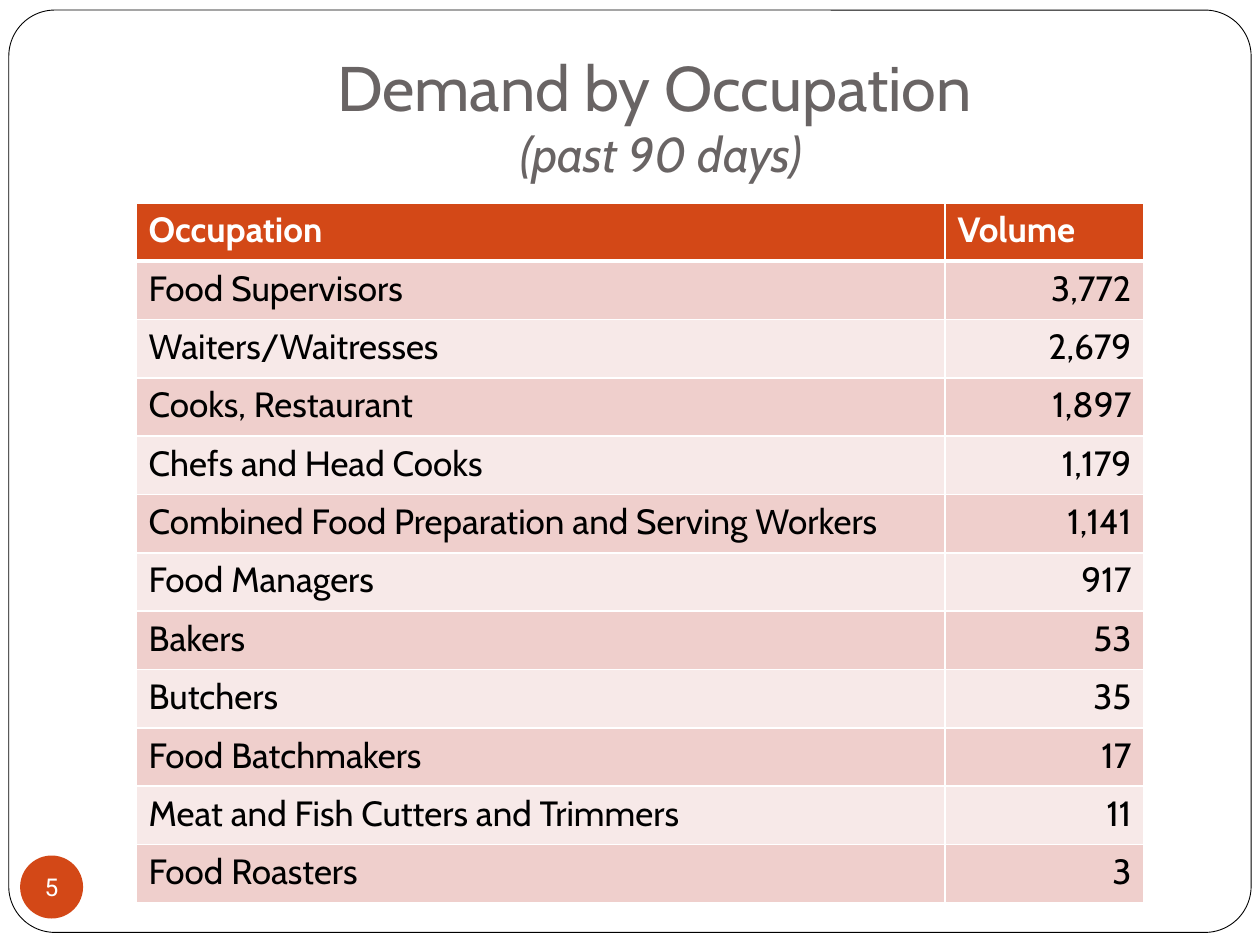
from lxml import etree
from pptx import Presentation
from pptx import util as u
from pptx.dml.color import RGBColor
from pptx.enum import shapes, text
from pptx.oxml.ns import qn

PX = u.Inches(1) // 100
WHITE = RGBColor(0xFF, 0xFF, 0xFF)
BLACK = RGBColor(0, 0, 0)
GREY = RGBColor(0x69, 0x64, 0x64)
ORANGE = RGBColor(0xD3, 0x48, 0x17)
PINK = RGBColor(0xEF, 0xCF, 0xCC)
PALE_PINK = RGBColor(0xF7, 0xE9, 0xE8)

ROWS = [
    ("Occupation", "Volume"),
    ("Food Supervisors", "3,772"),
    ("Waiters/Waitresses", "2,679"),
    ("Cooks, Restaurant", "1,897"),
    ("Chefs and Head Cooks", "1,179"),
    ("Combined Food Preparation and Serving Workers", "1,141"),
    ("Food Managers", "917"),
    ("Bakers", "53"),
    ("Butchers", "35"),
    ("Food Batchmakers", "17"),
    ("Meat and Fish Cutters and Trimmers", "11"),
    ("Food Roasters", "3"),
]


def style_run(run, size, color, name="Cabin", bold=False, italic=False):
    run.font.size = u.Pt(size)
    run.font.color.rgb = color
    run.font.name = name
    run.font.bold = bold
    run.font.italic = italic


def add_border(cell, side, points):
    line = etree.SubElement(cell._tc.get_or_add_tcPr(), qn(f"a:ln{side}"), w=str(u.Pt(points)))
    fill = etree.SubElement(line, qn("a:solidFill"))
    etree.SubElement(fill, qn("a:srgbClr"), val=str(WHITE))


presentation = Presentation()
presentation.slide_width = 1000 * PX
presentation.slide_height = 750 * PX
slide = presentation.slides.add_slide(presentation.slide_layouts[6])

frame = slide.shapes.add_shape(
    shapes.MSO_SHAPE.ROUNDED_RECTANGLE, 7 * PX, 8 * PX, 986 * PX, 732 * PX)
frame.adjustments[0] = 0.05
frame.shadow.inherit = False
frame.fill.solid()
frame.fill.fore_color.rgb = WHITE
frame.line.color.rgb = BLACK
frame.line.width = u.Pt(0.5)

title = slide.shapes.add_textbox(100 * PX, 30 * PX, 850 * PX, 125 * PX)
title.text_frame.word_wrap = True
title.text_frame.vertical_anchor = text.MSO_ANCHOR.BOTTOM
title.text_frame.margin_bottom = 10 * PX
title.text_frame.text = "Demand by Occupation \v(past 90 days)"
paragraph = title.text_frame.paragraphs[0]
paragraph.alignment = text.PP_ALIGN.CENTER
heading, subheading = paragraph.runs
style_run(heading, 36, GREY)
style_run(subheading, 27.9, GREY, italic=True)

badge = slide.shapes.add_shape(
    shapes.MSO_SHAPE.OVAL, 16 * PX, 679 * PX, 50 * PX, 50 * PX)
badge.shadow.inherit = False
badge.fill.solid()
badge.fill.fore_color.rgb = ORANGE
badge.line.fill.background()
badge_text = badge.text_frame
badge_text.margin_left = badge_text.margin_right = 0
badge_text.margin_top = badge_text.margin_bottom = 0
badge_text.word_wrap = False
badge_text.vertical_anchor = text.MSO_ANCHOR.MIDDLE
badge_text.text = "5"
badge_text.paragraphs[0].alignment = text.PP_ALIGN.CENTER
style_run(badge_text.paragraphs[0].runs[0], 14, WHITE, name="Roboto")

table = slide.shapes.add_table(
    len(ROWS), 2, 108 * PX, 161 * PX, 800 * PX, 556 * PX).table
table.columns[0].width = 642 * PX
table.columns[1].width = 158 * PX

for row, values in enumerate(ROWS):
    header = row == 0
    for column, value in enumerate(values):
        cell = table.cell(row, column)
        for side in "LRTB":
            thick = (row, side) in ((0, "B"), (1, "T"))
            add_border(cell, side, 3 if thick else 1)
        cell.fill.solid()
        cell.fill.fore_color.rgb = ORANGE if header else PINK if row % 2 else PALE_PINK
        cell.text_frame.text = value
        paragraph = cell.text_frame.paragraphs[0]
        if column == 1 and not header:
            paragraph.alignment = text.PP_ALIGN.RIGHT
        style_run(paragraph.runs[0], 20, WHITE if header else BLACK, bold=header)

presentation.save("out.pptx")
